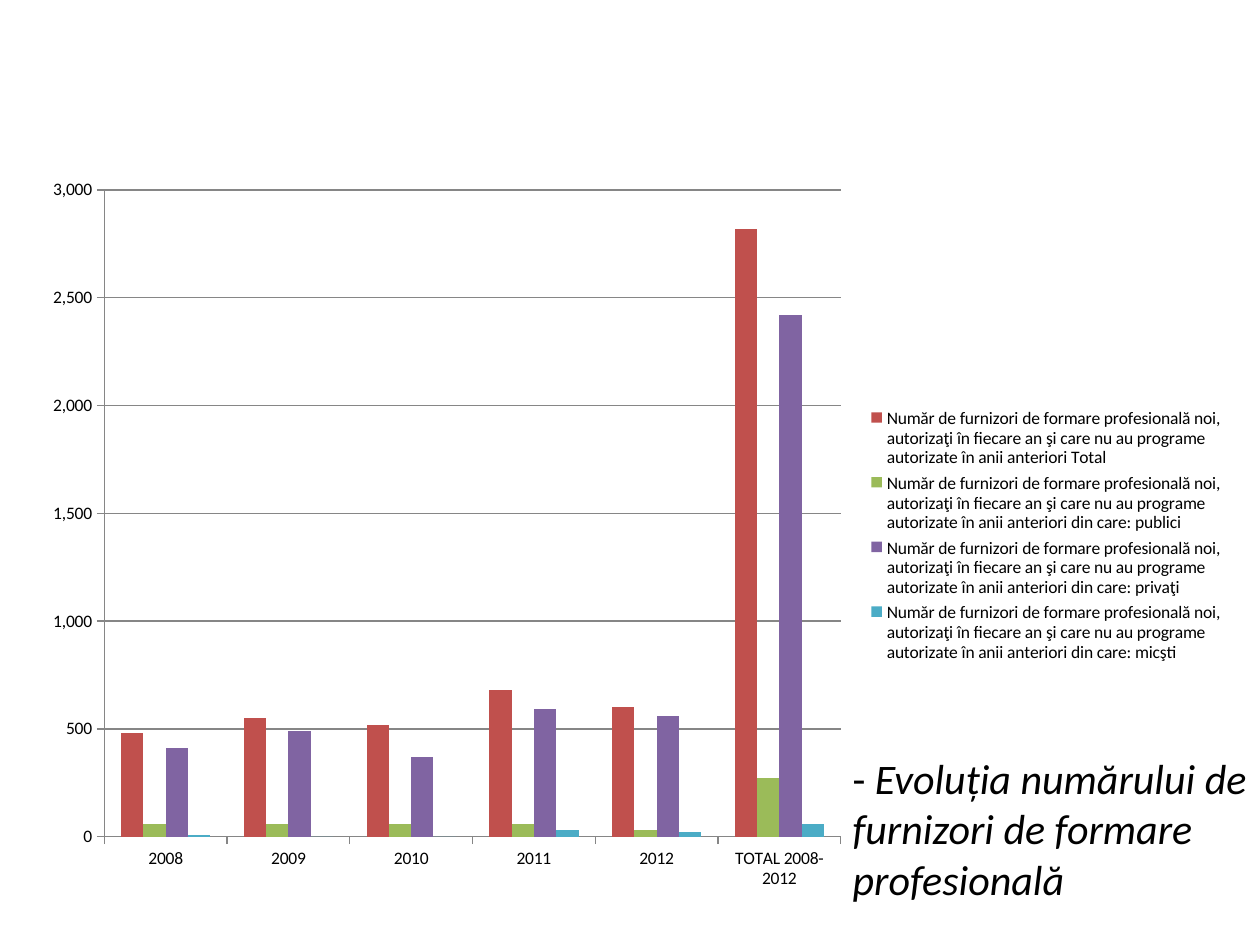
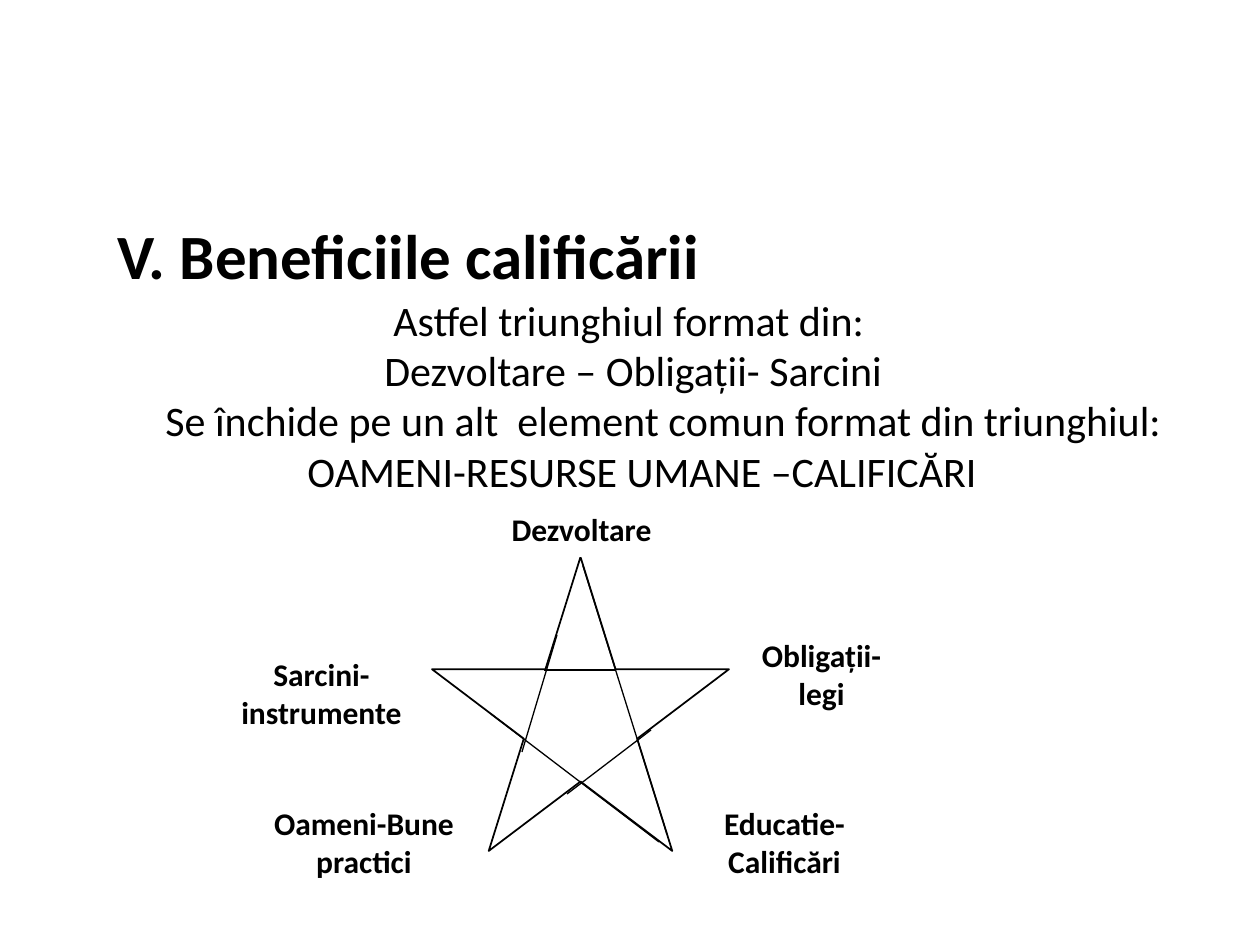
from dataclasses import dataclass

from lxml import etree
from pptx import Presentation
from pptx.chart.data import CategoryChartData
from pptx.dml.color import RGBColor
from pptx.enum.chart import XL_CHART_TYPE as ChartType
from pptx.enum.chart import XL_LEGEND_POSITION as LegendPosition
from pptx.enum.chart import XL_TICK_MARK as TickMark
from pptx.enum.shapes import MSO_CONNECTOR as Connector
from pptx.enum.shapes import MSO_SHAPE as Shape
from pptx.enum.text import MSO_ANCHOR as Anchor
from pptx.enum.text import MSO_AUTO_SIZE as AutoSize
from pptx.enum.text import PP_ALIGN as Align
from pptx.oxml.ns import qn
from pptx.util import Pt

EMU_PER_PX = 914400 / 126
TITLE_ONLY = 5


def px(length):
    return round(length * EMU_PER_PX)


def rgb(code):
    return RGBColor.from_string(code)


@dataclass(frozen=True)
class Theme:
    font: str = "Calibri"
    ink: str = "000000"
    paper: str = "FFFFFF"
    grid: str = "868686"
    series: tuple = ("C0504D", "9BBB59", "8064A2", "4BACC6")
    heading: int = 36
    body: int = 24
    label: int = 18
    chart: int = 10
    outline: float = 1
    thin: float = 0.75


class Deck:
    """Holds the theme, the presentation and the slide being filled."""

    def __init__(self, theme):
        self.theme = theme
        self.file = Presentation()
        self.file.slide_width, self.file.slide_height = px(1260), px(945)
        self.slide = None

    def new_slide(self):
        self.slide = self.file.slides.add_slide(self.file.slide_layouts[TITLE_ONLY])
        self.slide.background.fill.solid()
        self.slide.background.fill.fore_color.rgb = rgb(self.theme.paper)

    def add_text_run(self, paragraph, text, size, bold=False, italic=False):
        run = paragraph.add_run()
        run.text = text
        font = run.font
        font.name, font.size = self.theme.font, Pt(size)
        font.bold, font.italic = bold, italic
        font.color.rgb = rgb(self.theme.ink)

    def prepare_frame(self, frame):
        frame.word_wrap = True
        frame.auto_size = AutoSize.NONE
        frame.vertical_anchor = Anchor.TOP

    def title(self, box, runs, size):
        """Place the title; runs holds (text, bold, italic) triples."""
        title = self.slide.shapes.title
        title.left, title.top, title.width, title.height = map(px, box)
        frame = title.text_frame
        self.prepare_frame(frame)
        frame.margin_right = 0
        paragraph = frame.paragraphs[0]
        paragraph.alignment = Align.LEFT
        for text, bold, italic in runs:
            self.add_text_run(paragraph, text, size, bold, italic)

    def indented_text(self, box, lines):
        """Add one paragraph for each (indent, text) pair."""
        frame = self.slide.shapes.add_textbox(*map(px, box)).text_frame
        self.prepare_frame(frame)
        frame.margin_top = 0
        for number, (indent, text) in enumerate(lines):
            paragraph = frame.add_paragraph() if number else frame.paragraphs[0]
            paragraph._p.get_or_add_pPr().set("marL", str(px(indent)))
            self.add_text_run(paragraph, text, self.theme.body)

    def shape(self, kind, box, outlined=False):
        shape = self.slide.shapes.add_shape(kind, *map(px, box))
        shape.shadow.inherit = False
        shape.fill.solid()
        shape.fill.fore_color.rgb = rgb(self.theme.paper)
        if outlined:
            shape.line.color.rgb = rgb(self.theme.ink)
            shape.line.width = Pt(self.theme.outline)
        else:
            shape.line.fill.background()
        return shape

    def label(self, box, text):
        frame = self.shape(Shape.RECTANGLE, box).text_frame
        self.prepare_frame(frame)
        paragraph = frame.paragraphs[0]
        paragraph.alignment = Align.CENTER
        paragraph.space_after = Pt(10)
        self.add_text_run(paragraph, text, self.theme.label, bold=True)

    def line(self, *ends):
        line = self.slide.shapes.add_connector(Connector.STRAIGHT, *map(px, ends))
        line.line.color.rgb = rgb(self.theme.ink)
        line.line.width = Pt(self.theme.thin)
        etree.SubElement(line._element.spPr, qn("a:effectLst"))

    def column_chart(self, box, categories, series):
        data = CategoryChartData(number_format="#,##0")
        data.categories = categories
        for name, values in series:
            data.add_series(name, values)
        chart = self.slide.shapes.add_chart(
            ChartType.COLUMN_CLUSTERED, *map(px, box), data).chart
        chart.has_title = False
        chart.font.name, chart.font.size = self.theme.font, Pt(self.theme.chart)
        chart.font.color.rgb = rgb(self.theme.ink)
        plot = chart.plots[0]
        plot.vary_by_categories = False
        plot.gap_width, plot.overlap = 150, 0
        for bars, color in zip(plot.series, self.theme.series):
            bars.format.fill.solid()
            bars.format.fill.fore_color.rgb = rgb(color)
            bars.invert_if_negative = False
        scale = chart.value_axis
        scale.minimum_scale, scale.maximum_scale, scale.major_unit = 0, 3000, 500
        scale.has_major_gridlines = True
        scale.tick_labels.number_format = "#,##0"
        scale.tick_labels.number_format_is_linked = False
        for axis in (scale, chart.category_axis):
            axis.major_tick_mark = TickMark.OUTSIDE
            axis.format.line.color.rgb = rgb(self.theme.grid)
        scale.major_gridlines.format.line.color.rgb = rgb(self.theme.grid)
        chart.has_legend = True
        chart.legend.position = LegendPosition.RIGHT
        chart.legend.include_in_layout = False
        return chart

    def title_to_front(self):
        self.slide.shapes._spTree.append(self.slide.shapes.title._element)


def set_layout(part, index, fractions, inner=False):
    """Fix a chart part at x, y, w, h, given as fractions of the chart."""
    for old in part.findall(qn("c:layout")):
        part.remove(old)
    layout = etree.Element(qn("c:layout"))
    manual = etree.SubElement(layout, qn("c:manualLayout"))
    settings = [("layoutTarget", "inner")] if inner else []
    settings += [("xMode", "edge"), ("yMode", "edge"), *zip("xywh", fractions)]
    for tag, value in settings:
        etree.SubElement(manual, qn(f"c:{tag}")).set("val", str(value))
    part.insert(index, layout)


def provider_slide(deck):
    deck.new_slide()
    deck.title((840, 746, 420, 165), [
        ("- ", False, False),
        ("Evoluția numărului de furnizori de formare profesională", False, True),
    ], deck.theme.body)
    providers = ("Număr de furnizori de formare profesională noi, autorizaţi în "
                 "fiecare an şi care nu au programe autorizate în anii anteriori ")
    counts = {
        "Total": (480, 550, 520, 680, 600, 2820),
        "din care: publici": (60, 60, 60, 60, 30, 270),
        "din care: privaţi": (410, 490, 370, 590, 560, 2420),
        "din care: micşti": (10, 0, 0, 30, 20, 60),
    }
    years = [str(year) for year in range(2008, 2013)]
    chart = deck.column_chart(
        (32, 168, 1207, 735), years + ["TOTAL 2008- 2012"],
        [(providers + group, values) for group, values in counts.items()])
    plot_area = chart._chartSpace.chart.plotArea
    set_layout(plot_area, 0, (0.06, 0.03, 0.61, 0.88), inner=True)
    set_layout(chart.legend._element, 1, (0.69, 0.32, 0.3, 0.36))
    deck.title_to_front()


def benefits_slide(deck):
    deck.new_slide()
    deck.title((105, 210, 1102, 83), [("V. Beneficiile calificării", True, False)],
               deck.theme.heading)
    deck.indented_text((105, 294, 1102, 210), [
        (276, "Astfel triunghiul format din:"),
        (267, "Dezvoltare – Obligații- Sarcini"),
        (48, "Se închide pe un alt  element comun format din triunghiul:"),
        (190, "OAMENI-RESURSE UMANE –CALIFICĂRI"),
    ])
    deck.shape(Shape.STAR_5_POINT, (432, 557, 297, 294), outlined=True)
    for star_side in [
        (544, 670, 615, 670),
        (491, 714, 659, 842),
        (557, 635, 522, 752),
        (583, 566, 667, 834),
        (567, 794, 651, 730),
    ]:
        deck.line(*star_side)
    for box, star_point in [
        ((494, 504, 175, 53), "Dezvoltare"),
        ((220, 649, 203, 87), "Sarcini-instrumente"),
        ((252, 798, 224, 94), "Oameni-Bune practici"),
        ((685, 798, 199, 84), "Educatie-Calificări"),
        ((737, 630, 169, 84), "Obligații-legi"),
    ]:
        deck.label(box, star_point)


def main():
    deck = Deck(Theme())
    provider_slide(deck)
    benefits_slide(deck)
    deck.file.save("out.pptx")


if __name__ == "__main__":
    main()
